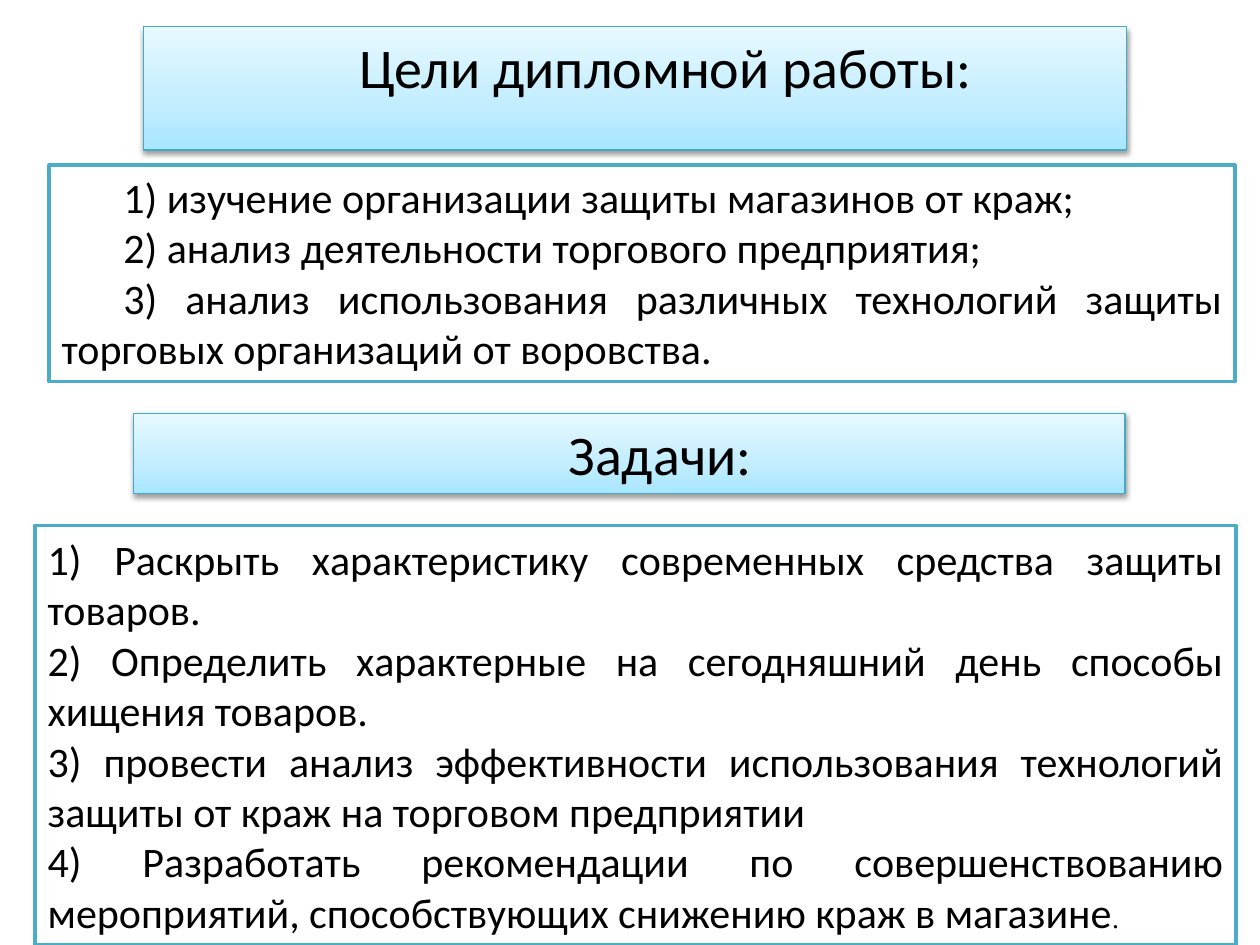
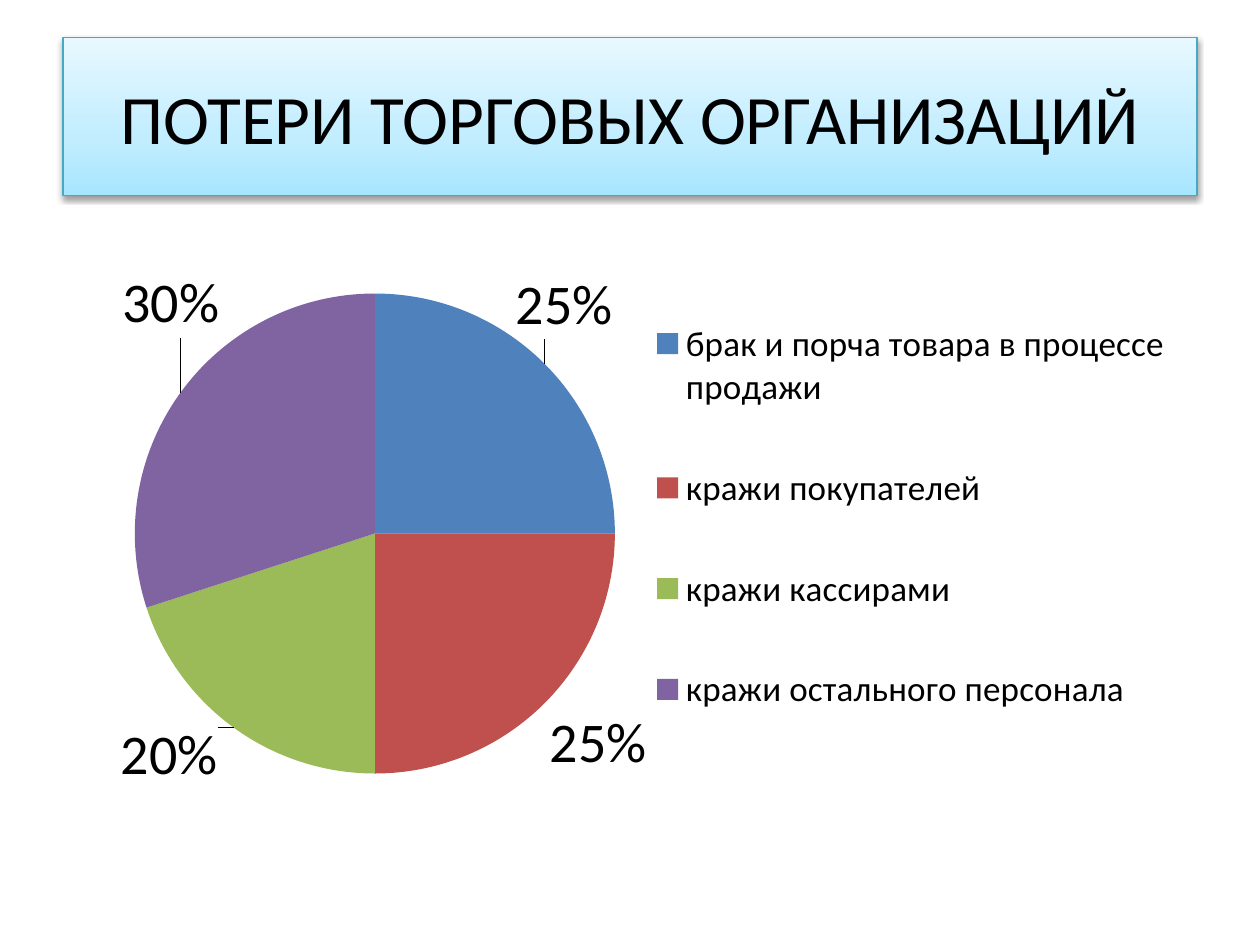
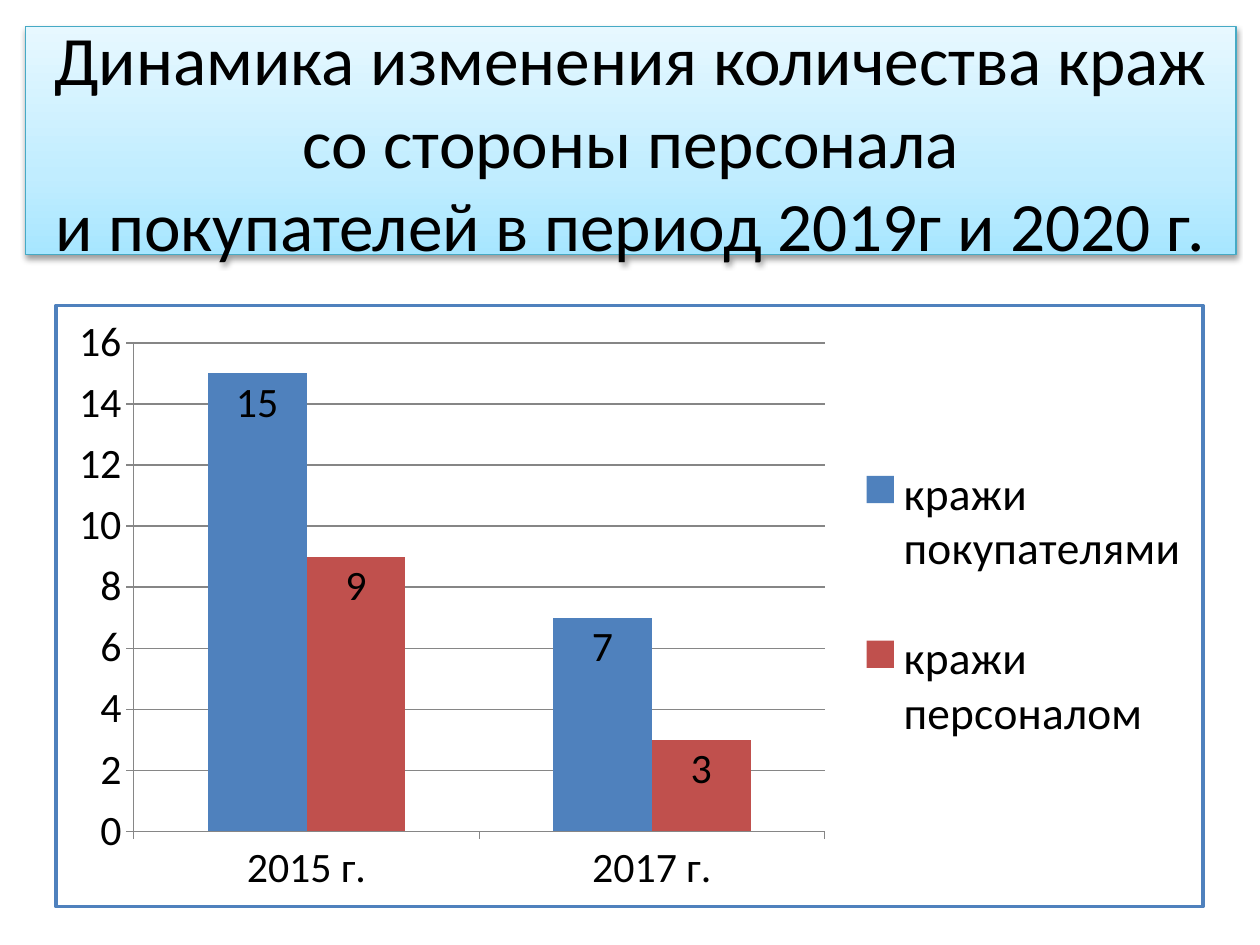
import pptx
import pptx.chart.data
import pptx.dml.color
import pptx.enum.chart
import pptx.enum.shapes
import pptx.enum.text
import pptx.oxml
import pptx.oxml.ns
import pptx.util

Inches, Pt = pptx.util.Inches, pptx.util.Pt
qn, nsdecls = pptx.oxml.ns.qn, pptx.oxml.ns.nsdecls
ALIGN, ANCHOR = pptx.enum.text.PP_ALIGN, pptx.enum.text.MSO_ANCHOR
XL = pptx.enum.chart

FONT = "Calibri"
COLORS = {"text": "000000", "white": "FFFFFF", "band_line": "46AAC5", "frame": "4BACC6",
          "grid": "868686", "blue": "4F81BD", "red": "C0504D", "green": "9BBB59",
          "purple": "8064A2"}
BAND_STOPS = [(0, "A7E6FF"), (35, "C1EDFF"), (100, "E7F8FF")]
INDENT = 0.49

GOALS_TITLE = "Цели дипломной работы:"
GOALS = [
    "1) изучение организации защиты магазинов от краж; ",
    "2) анализ деятельности торгового предприятия;",
    "3) анализ использования различных технологий защиты торговых организаций от воровства.",
]
TASKS_TITLE = "Задачи:"
TASKS = [
    "1) Раскрыть характеристику современных средства защиты товаров.",
    "2) Определить характерные на сегодняшний день способы хищения товаров.",
    "3) провести анализ эффективности использования технологий защиты от краж на торговом предприятии",
    "4) Разработать рекомендации по совершенствованию мероприятий, способствующих снижению краж в магазине",
]
LOSSES_TITLE = "ПОТЕРИ ТОРГОВЫХ ОРГАНИЗАЦИЙ"
LOSSES = [
    ("брак и порча товара в процессе продажи", 0.25, "blue"),
    ("кражи покупателей", 0.25, "red"),
    ("кражи кассирами", 0.2, "green"),
    ("кражи остального персонала", 0.3, "purple"),
]
LABEL_SHIFTS = [(-0.03, -0.03), (0, 0), (-0.01, -0.02), (0.04, -0.08)]
THEFTS_TITLE = ("Динамика изменения количества краж со стороны персонала\v"
                "и покупателей в период 2019г и 2020 г.")
YEARS = ["2015 г.", "2017 г."]
THEFTS = [("кражи покупателями", [15, 7], "blue"), ("кражи персоналом", [9, 3], "red")]


def rgb(name):
    return pptx.dml.color.RGBColor.from_string(COLORS[name])


def set_font(font, size, name=FONT):
    for key, value in {"size": Pt(size), "name": name, "bold": False}.items():
        setattr(font, key, value)
    font.color.rgb = rgb("text")


def place(sp, at):
    for key, value in zip(("left", "top", "width", "height"), at):
        setattr(sp, key, Inches(value))


def write(sp, lines, size, align, anchor, indent=0):
    tf = sp.text_frame
    for key, value in {"word_wrap": True, "vertical_anchor": anchor,
                       "auto_size": pptx.enum.text.MSO_AUTO_SIZE.NONE}.items():
        setattr(tf, key, value)
    tf.text = "\n".join(lines)
    for p in tf.paragraphs:
        p.alignment = align
        pPr = p._p.get_or_add_pPr()
        pPr.set("marL", "0")
        pPr.set("indent", str(Inches(indent)))
        for r in p.runs:
            set_font(r.font, size)


def outline(sp, color, width):
    sp.line.color.rgb = rgb(color)
    sp.line.width = Pt(width)
    sp.shadow.inherit = False


def add_rect(s, at):
    return s.shapes.add_shape(pptx.enum.shapes.MSO_SHAPE.RECTANGLE, *map(Inches, at))


def style_band(sp, at, text, size, anchor=ANCHOR.MIDDLE, indent=0):
    place(sp, at)
    sp.fill.gradient()
    sp.fill.gradient_angle = 90
    outline(sp, "band_line", 0.75)
    spPr = sp._element.spPr
    stops = spPr.find(".//" + qn("a:gsLst"))
    for gs in list(stops):
        stops.remove(gs)
    for pos, color in BAND_STOPS:
        stops.append(pptx.oxml.parse_xml(
            f'<a:gs {nsdecls("a")} pos="{pos * 1000}"><a:srgbClr val="{color}"/></a:gs>'))
    spPr.find(qn("a:effectLst")).append(pptx.oxml.parse_xml(
        f'<a:outerShdw {nsdecls("a")} blurRad="{Pt(3.1)}" dist="{Pt(1.6)}" dir="5400000" '
        'rotWithShape="0"><a:srgbClr val="000000"><a:alpha val="38000"/></a:srgbClr>'
        '</a:outerShdw>'))
    write(sp, [text], size, ALIGN.CENTER, anchor, indent)


def add_frame(s, at, lines, anchor, indent=0):
    sp = add_rect(s, at)
    sp.fill.solid()
    sp.fill.fore_color.rgb = rgb("white")
    outline(sp, "frame", 2)
    write(sp, lines, 24, ALIGN.JUSTIFY, anchor, indent)
    return sp


def manual_layout(values, modes=True, inner=False):
    tags = '<c:layoutTarget val="inner"/>' if inner else ""
    if modes:
        tags += '<c:xMode val="edge"/><c:yMode val="edge"/>'
    tags += "".join(f'<c:{key} val="{value}"/>' for key, value in zip("xywh", values))
    return pptx.oxml.parse_xml(
        f'<c:layout {nsdecls("c")}><c:manualLayout>{tags}</c:manualLayout></c:layout>')


def add_chart(s, kind, at, data, plot_box, legend_box, legend_size):
    chart = s.shapes.add_chart(kind, *map(Inches, at), data).chart
    chart.has_title = False
    set_font(chart.font, 10)
    chart.has_legend = True
    legend = chart.legend
    legend.position = XL.XL_LEGEND_POSITION.RIGHT
    legend.include_in_layout = False
    set_font(legend.font, legend_size)
    area = chart._chartSpace.chart.plotArea
    for parent in (area, legend._element):
        for old in parent.findall(qn("c:layout")):
            parent.remove(old)
    plot_part, legend_part = ([length / side for length, side in zip(box, at[2:] * 2)]
                              for box in (plot_box, legend_box))
    area.insert(0, manual_layout(plot_part, inner=True))
    legend._element.find(qn("c:legendPos")).addnext(manual_layout(legend_part))
    return chart


def paint(part, color):
    part.format.fill.solid()
    part.format.fill.fore_color.rgb = rgb(color)


def show_values(labels, position, size):
    labels.show_value = True
    labels.position = position
    set_font(labels.font, size)


def build_goals(s):
    style_band(s.shapes.title, (1.14, 0.21, 7.8, 0.98), GOALS_TITLE, 32, ANCHOR.TOP, INDENT)
    add_frame(s, (0.39, 1.31, 9.41, 1.72), GOALS, ANCHOR.TOP, INDENT)
    at = (1.06, 3.28, 7.87, 0.64)
    style_band(add_rect(s, at), at, TASKS_TITLE, 32, indent=INDENT)
    tasks = add_frame(s, (0.28, 4.17, 9.53, 3.33), TASKS, ANCHOR.MIDDLE)
    r = tasks.text_frame.paragraphs[-1].add_run()
    r.text = "."
    set_font(r.font, 16, "Times New Roman")


def build_losses(s):
    style_band(s.shapes.title, (0.5, 0.3, 9, 1.25), LOSSES_TITLE, 39.6)
    data = pptx.chart.data.CategoryChartData(number_format="0%")
    data.categories = [name for name, _, _ in LOSSES]
    data.add_series("Series 1", [share for _, share, _ in LOSSES])
    chart = add_chart(s, XL.XL_CHART_TYPE.PIE, (0.43, 1.7, 9, 4.95), data,
                      (0.64, 0.63, 3.81, 3.81), (4.73, 0.4, 4.14, 4), 20)
    chart.plots[0].vary_by_categories = True
    series = chart.plots[0].series[0]
    outside = XL.XL_LABEL_POSITION.OUTSIDE_END
    show_values(series.data_labels, outside, 32)
    series.data_labels.number_format = "0%"
    series.data_labels.number_format_is_linked = False
    for i, ((_, _, color), shift) in enumerate(zip(LOSSES, LABEL_SHIFTS)):
        point = series.points[i]
        paint(point, color)
        if any(shift):
            label = point.data_label
            label.position = outside
            set_font(label.font, 32)
            dLbl = series.data_labels._element.findall(qn("c:dLbl"))[-1]
            dLbl.find(qn("c:idx")).addnext(manual_layout(shift, modes=False))


def build_thefts(s):
    style_band(s.shapes.title, (0.2, 0.21, 9.61, 1.81), THEFTS_TITLE, 39.6)
    data = pptx.chart.data.CategoryChartData()
    data.categories = YEARS
    for name, counts, _ in THEFTS:
        data.add_series(name, counts)
    chart = add_chart(s, XL.XL_CHART_TYPE.COLUMN_CLUSTERED, (0.43, 2.41, 9.13, 4.8), data,
                      (0.62, 0.3, 5.5, 3.9), (6.38, 0.85, 2.65, 3.07), 26)
    plot = chart.plots[0]
    plot.vary_by_categories = False
    plot.gap_width = 150
    for series, (_, _, color) in zip(plot.series, THEFTS):
        paint(series, color)
        show_values(series.data_labels, XL.XL_LABEL_POSITION.INSIDE_END, 24)
    for axis in (chart.category_axis, chart.value_axis):
        axis.major_tick_mark = XL.XL_TICK_MARK.OUTSIDE
        axis.format.line.color.rgb = rgb("grid")
        set_font(axis.tick_labels.font, 24)
    chart.value_axis.has_major_gridlines = True
    chart.value_axis.major_gridlines.format.line.color.rgb = rgb("grid")
    chart._chartSpace.chart.addnext(pptx.oxml.parse_xml(
        f'<c:spPr {nsdecls("c", "a")}><a:solidFill><a:srgbClr val="{COLORS["white"]}"/>'
        f'</a:solidFill><a:ln w="{Pt(2)}"><a:solidFill><a:srgbClr val="{COLORS["blue"]}"/>'
        '</a:solidFill></a:ln></c:spPr>'))


def main():
    prs = pptx.Presentation()
    prs.slide_width, prs.slide_height = Inches(10), Inches(7.5)
    for build in (build_goals, build_losses, build_thefts):
        build(prs.slides.add_slide(prs.slide_layouts[5]))
    prs.save("out.pptx")


if __name__ == "__main__":
    main()
